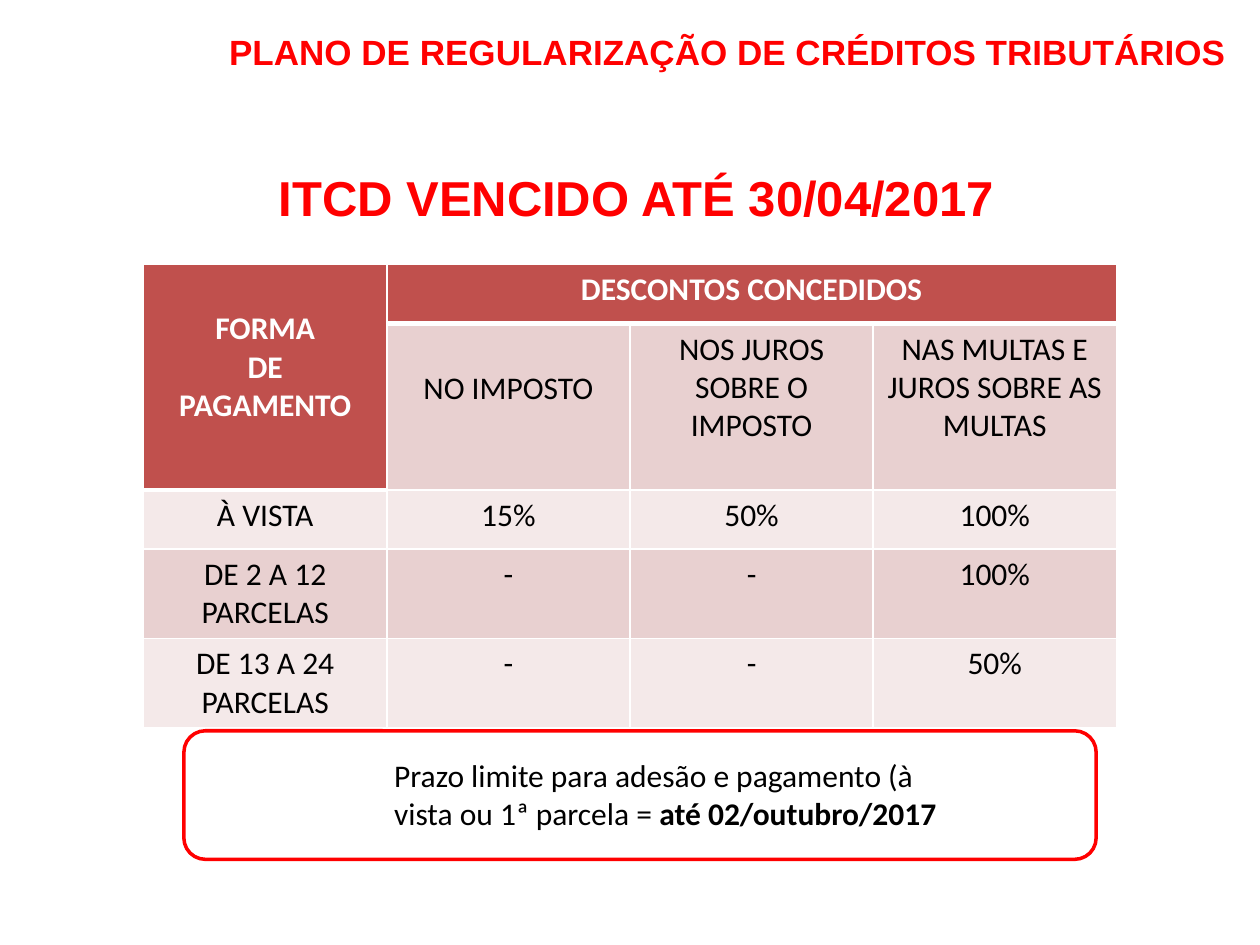
"""Builds the slide on ITCD discounts by form of payment."""
from pptx import Presentation
from pptx import util as u
from pptx.dml.color import RGBColor
from pptx.enum import shapes, text
from pptx.oxml import parse_xml
from pptx.oxml.ns import nsdecls

RED, BRICK, ROSE, PALE = "FF0000", "C0504D", "E8D0D0", "F4E9E9"
WHITE, BLACK = "FFFFFF", "000000"
HEAD = "PLANO DE REGULARIZAÇÃO DE CRÉDITOS TRIBUTÁRIOS"
TOPIC = "ITCD VENCIDO ATÉ 30/04/2017"
LIMIT = ["Prazo limite para adesão e pagamento (à vista ou 1ª parcela = ",
         "até 02/outubro/2017"]
ROWS = [
    ["FORMA\nDE\nPAGAMENTO", "DESCONTOS CONCEDIDOS", "", ""],
    ["", "NO IMPOSTO", "NOS JUROS SOBRE O IMPOSTO",
     "NAS MULTAS E JUROS SOBRE AS MULTAS"],
    ["À VISTA", "15%", "50%", "100%"],
    ["DE 2 A 12 PARCELAS", "-", "-", "100%"],
    ["DE 13 A 24 PARCELAS", "-", "-", "50%"],
]
TALL = [0.47, 1.32, 0.47, 0.71, 0.71]
WIDE = 1.93
DROPS = {(0, 0): 0.36, (1, 1): 0.36}
ALIGN = text.PP_ALIGN


def color(code):
    return RGBColor.from_string(code)


def box(*at):
    return [u.Inches(n) for n in at]


def style(frame, size, font, code, bold=False, align=ALIGN.LEFT):
    for para in frame.paragraphs:
        para.alignment = align
        for run in para.runs:
            run.font.size, run.font.name = u.Pt(size), font
            run.font.bold = bold
            run.font.color.rgb = color(code)


def border(cell, side, width):
    cell._tc.get_or_add_tcPr().append(parse_xml(
        f'<a:ln{side} {nsdecls("a")} w="{u.Pt(width)}"><a:solidFill>'
        f'<a:srgbClr val="{WHITE}"/></a:solidFill></a:ln{side}>'))


def add_grid(slide):
    cols = len(ROWS[0])
    table = slide.shapes.add_table(
        len(ROWS), cols, *box(1.14, 2.1, WIDE * cols, sum(TALL))).table
    for col in table.columns:
        col.width = u.Inches(WIDE)
    for row, tall in zip(table.rows, TALL):
        row.height = u.Inches(tall)
    table.cell(0, 0).merge(table.cell(1, 0))
    table.cell(0, 1).merge(table.cell(0, 3))
    for r, words in enumerate(ROWS):
        for c, word in enumerate(words):
            cell = table.cell(r, c)
            head = r == 0 or (r, c) == (1, 0)
            over = (r == 1 and c > 0) or (r == 2 and c == 0)
            for side, width in (("L", 1), ("R", 1), ("T", 3 if over else 1),
                                ("B", 3 if head else 1)):
                border(cell, side, width)
            cell.fill.solid()
            cell.fill.fore_color.rgb = color(
                BRICK if head else ROSE if r % 2 else PALE)
            cell.margin_top = u.Inches(DROPS.get((r, c), 0.05))
            if word:
                cell.text_frame.text = word
                style(cell.text_frame, 18, "Calibri",
                      WHITE if head else BLACK, head, ALIGN.CENTER)


def add_text(slide, at, words):
    frame = slide.shapes.add_textbox(*box(*at)).text_frame
    frame.word_wrap = True
    for word in words:
        frame.paragraphs[0].add_run().text = word
    return frame


def main():
    deck = Presentation()
    deck.slide_width, deck.slide_height = box(10, 7.5)
    slide = deck.slides.add_slide(deck.slide_layouts[5])

    title = slide.shapes.title
    title.left, title.top, title.width, title.height = box(0.83, 0.05, 9, 0.71)
    title.text_frame.text = HEAD
    title.text_frame.vertical_anchor = text.MSO_ANCHOR.MIDDLE
    style(title.text_frame, 20, "Arial", RED, True, ALIGN.RIGHT)

    topic = add_text(slide, (0.43, 1.28, 9.24, 0.6), [TOPIC])
    style(topic, 28, "Arial", RED, True, ALIGN.CENTER)

    add_grid(slide)

    frame = slide.shapes.add_shape(
        shapes.MSO_SHAPE.ROUNDED_RECTANGLE, *box(1.46, 5.8, 7.24, 1.02))
    frame.shadow.inherit = False
    frame.fill.background()
    frame.line.color.rgb = color(RED)
    frame.line.width = u.Pt(2)

    limit = add_text(slide, (3.03, 5.95, 4.57, 1.01), LIMIT)
    style(limit, 18, "Calibri", BLACK)
    limit.paragraphs[0].runs[1].font.bold = True

    deck.save("out.pptx")


if __name__ == "__main__":
    main()
